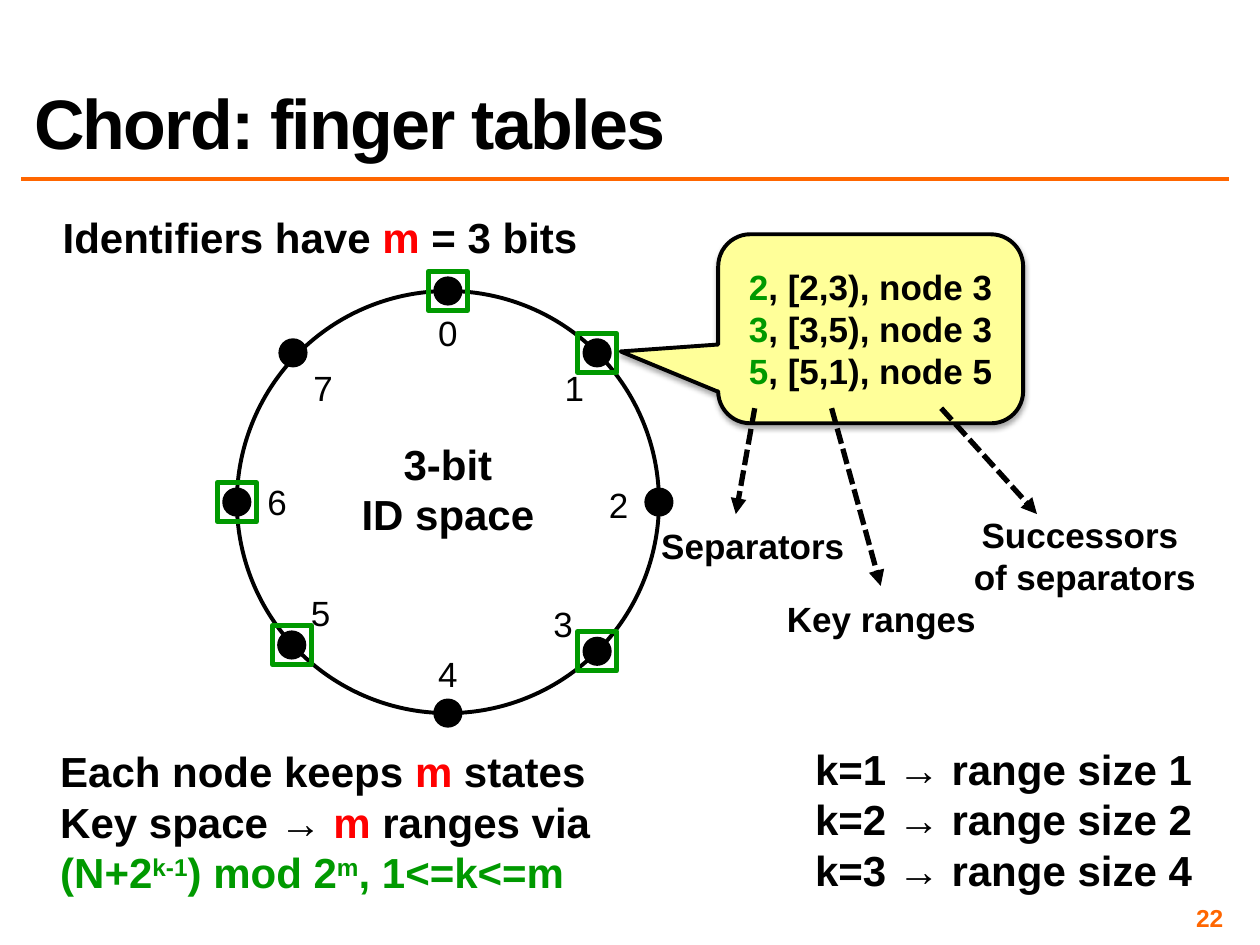
from math import cos, pi, sin

from lxml import etree
from pptx import Presentation
from pptx.dml.color import RGBColor
from pptx.enum.dml import MSO_LINE
from pptx.enum.shapes import MSO_CONNECTOR, MSO_SHAPE
from pptx.enum.text import MSO_ANCHOR, MSO_AUTO_SIZE, PP_ALIGN
from pptx.oxml.ns import qn
from pptx.util import Inches, Pt

LEFT, CENTER, RIGHT = PP_ALIGN.LEFT, PP_ALIGN.CENTER, PP_ALIGN.RIGHT
MIDDLE, BOTTOM = MSO_ANCHOR.MIDDLE, MSO_ANCHOR.BOTTOM
FIT_SHAPE, NO_FIT = MSO_AUTO_SIZE.SHAPE_TO_FIT_TEXT, MSO_AUTO_SIZE.NONE
OVAL, SQUARE = MSO_SHAPE.OVAL, MSO_SHAPE.RECTANGLE
CALLOUT = MSO_SHAPE.ROUNDED_RECTANGULAR_CALLOUT
STRAIGHT, DASHED = MSO_CONNECTOR.STRAIGHT, MSO_LINE.SQUARE_DOT

COLUMNS, ROWS = 100, 75
CELL = Inches(10) // COLUMNS
TITLE_ONLY = 5
BLACK, RED, GREEN = "000000", "FF0000", "009900"
ORANGE, YELLOW = "FF6600", "FFFF99"

LABEL_OFFSETS = [(0, 3.3), (-1.8, 2.8), (-3.2, 0.2), (-2.7, -2.2),
                 (0, -3.1), (2.3, -2.5), (3.2, 0), (2.4, 2.8)]
NODE_NUDGES = {5: (-0.55, -0.5), 7: (-0.45, 0)}
MARKED_NODES = {0, 1, 3, 5, 6}


def cells(*counts):
    return [round(count * CELL) for count in counts]


def around(x, y, width, height):
    return x - width / 2, y - height / 2, width, height


def color(value):
    return RGBColor.from_string(value)


def write(frame, lines, size, align=LEFT, bold=True):
    for index, spans in enumerate(lines):
        para = frame.paragraphs[0] if index == 0 else frame.add_paragraph()
        para.alignment = align
        para.font.name, para.font.size, para.font.bold = "Arial", Pt(size), bold
        for text, ink, *raised in spans:
            span = para.add_run()
            span.text = text
            span.font.color.rgb = color(ink)
            if raised:
                span._r.get_or_add_rPr().set("baseline", str(raised[0] * 1000))


def add_text(page, box, lines, size, align=LEFT, bold=True):
    frame = page.shapes.add_textbox(*cells(*box)).text_frame
    frame.word_wrap = False
    frame.auto_size = FIT_SHAPE
    write(frame, lines, size, align, bold)
    return frame


def add_outline(page, kind, box, line, width, fill=None):
    shape = page.shapes.add_shape(kind, *cells(*box))
    shape.shadow.inherit = False
    shape.line.color.rgb = color(line)
    shape.line.width = Pt(width)
    if fill:
        shape.fill.solid()
        shape.fill.fore_color.rgb = color(fill)
    else:
        shape.fill.background()
    return shape


def add_line(page, start, end, ink, width):
    line = page.shapes.add_connector(STRAIGHT, *cells(*start, *end))
    line.line.color.rgb = color(ink)
    line.line.width = Pt(width)
    etree.SubElement(line._element.spPr, qn("a:effectLst"))
    return line


def add_arrow(page, start, end):
    arrow = add_line(page, start, end, BLACK, 3)
    arrow.line.dash_style = DASHED
    etree.SubElement(arrow.line._get_or_add_ln(), qn("a:tailEnd"), type="triangle")


def add_heading(page, box, text):
    left, top, width, height = box
    title = page.shapes.title
    title.left, title.top, title.width, title.height = cells(*box)
    frame = title.text_frame
    frame.vertical_anchor, frame.auto_size = BOTTOM, NO_FIT
    write(frame, [[(text, BLACK)]], 40)
    para = frame.paragraphs[0]
    para.line_spacing = 0.8
    para.runs[0]._r.get_or_add_rPr().set("spc", "-100")
    rule = top + height + 0.8
    add_line(page, (left, rule), (left + width, rule), ORANGE, 2)


def add_page_number(page, box, number):
    frame = add_text(page, box, [[(number, ORANGE)]], 14, RIGHT)
    frame.word_wrap, frame.auto_size = True, NO_FIT
    frame.vertical_anchor = MIDDLE
    frame.margin_left = frame.margin_right = Inches(0.04)
    frame.margin_top = frame.margin_bottom = Inches(0.04)


def add_ring(page, box):
    left, top, width, height = box
    center_x, center_y = left + width / 2, top + height / 2
    add_outline(page, OVAL, box, BLACK, 2.25)
    add_text(page, around(center_x, center_y - 1, 15.9, 9.1),
             [[("3-bit", BLACK)], [("ID space", BLACK)]], 24, CENTER)
    for node, (label_x, label_y) in enumerate(LABEL_OFFSETS):
        angle = 2 * pi * node / len(LABEL_OFFSETS)
        nudge_x, nudge_y = NODE_NUDGES.get(node, (0, 0))
        x = center_x + width / 2 * sin(angle) + nudge_x
        y = center_y - height / 2 * cos(angle) + nudge_y
        add_outline(page, OVAL, around(x, y, 2, 2), BLACK, 2.25, BLACK)
        add_text(page, around(x + label_x, y + label_y, 3.6, 4.4),
                 [[(str(node), BLACK)]], 20, CENTER, bold=False)
        if node in MARKED_NODES:
            add_outline(page, SQUARE, around(x, y, 3.1, 3.1), GREEN, 3)


def add_finger_table(page, box, fingers):
    callout = add_outline(page, CALLOUT, box, BLACK, 2.25, YELLOW)
    for index, value in enumerate((-0.82, 0.12, 0.17)):
        callout.adjustments[index] = value
    effects = callout._element.spPr.find(qn("a:effectLst"))
    shadow = etree.SubElement(effects, qn("a:outerShdw"), blurRad=str(Pt(3.1)),
                              dist=str(Pt(1.8)), dir="5400000", rotWithShape="0")
    tint = etree.SubElement(shadow, qn("a:srgbClr"), val=BLACK)
    etree.SubElement(tint, qn("a:alpha"), val="35000")
    callout.text_frame.vertical_anchor = MIDDLE
    lines = [[(start, GREEN), (f", [{start},{end}), node {node}", BLACK)]
             for start, end, node in fingers]
    write(callout.text_frame, lines, 20, CENTER)


def add_column_notes(page, box):
    left, top, width, height = box
    start_y = top + height - 1.2
    notes = [
        (2.9, (1.4, 8.4), (-5.6, 8.7, 16.7, 4.4), ["Separators"]),
        (9, (12.9, 14.1), (4.4, 14.5, 17.1, 4.4), ["Key ranges"]),
        (17.7, (25.3, 8.4), (19.2, 7.9, 19.8, 7.7), ["Successors ", "of separators"]),
    ]
    for start, (end_x, drop), (x, y, label_width, label_height), words in notes:
        add_arrow(page, (left + start, start_y), (left + end_x, start_y + drop))
        add_text(page, (left + x, start_y + y, label_width, label_height),
                 [[(word, BLACK)] for word in words], 20, CENTER)


def add_rules(page, box):
    add_text(page, box, [
        [("Each node keeps ", BLACK), ("m", RED), (" states", BLACK)],
        [("Key space → ", BLACK), ("m", RED), (" ranges via", BLACK)],
        [("(N+2", GREEN), ("k-1", GREEN, 30), (") mod 2", GREEN),
         ("m", GREEN, 30), (", 1<=k<=m", GREEN)],
    ], 24)


def add_range_sizes(page, box):
    add_text(page, box, [[(f"k={k} → range size {2 ** (k - 1)}", BLACK)]
                         for k in (1, 2, 3)], 24)


def main():
    deck = Presentation()
    deck.slide_width, deck.slide_height = cells(COLUMNS, ROWS)
    page = deck.slides.add_slide(deck.slide_layouts[TITLE_ONLY])
    table_box = (57, 18.6, 24.2, 15)
    add_heading(page, (1.7, 1.7, 95.8, 11.7), "Chord: finger tables")
    add_page_number(page, (74.2, 71.7, 23.3, 2.3), "22")
    add_ring(page, (18.8, 23.1, 33.5, 33.5))
    add_text(page, (3.8, 16.3, 43.2, 5),
             [[("Identifiers have ", BLACK), ("m", RED), (" = 3 bits", BLACK)]],
             24, CENTER)
    add_rules(page, (3.8, 58.7, 44.4, 13.1))
    add_finger_table(page, table_box, [(str(start), end, node) for start, end, node
                                       in ((2, 3, 3), (3, 5, 3), (5, 1, 5))])
    add_column_notes(page, table_box)
    add_range_sizes(page, (63.7, 58.5, 32.2, 13.1))
    deck.save("out.pptx")


if __name__ == "__main__":
    main()
